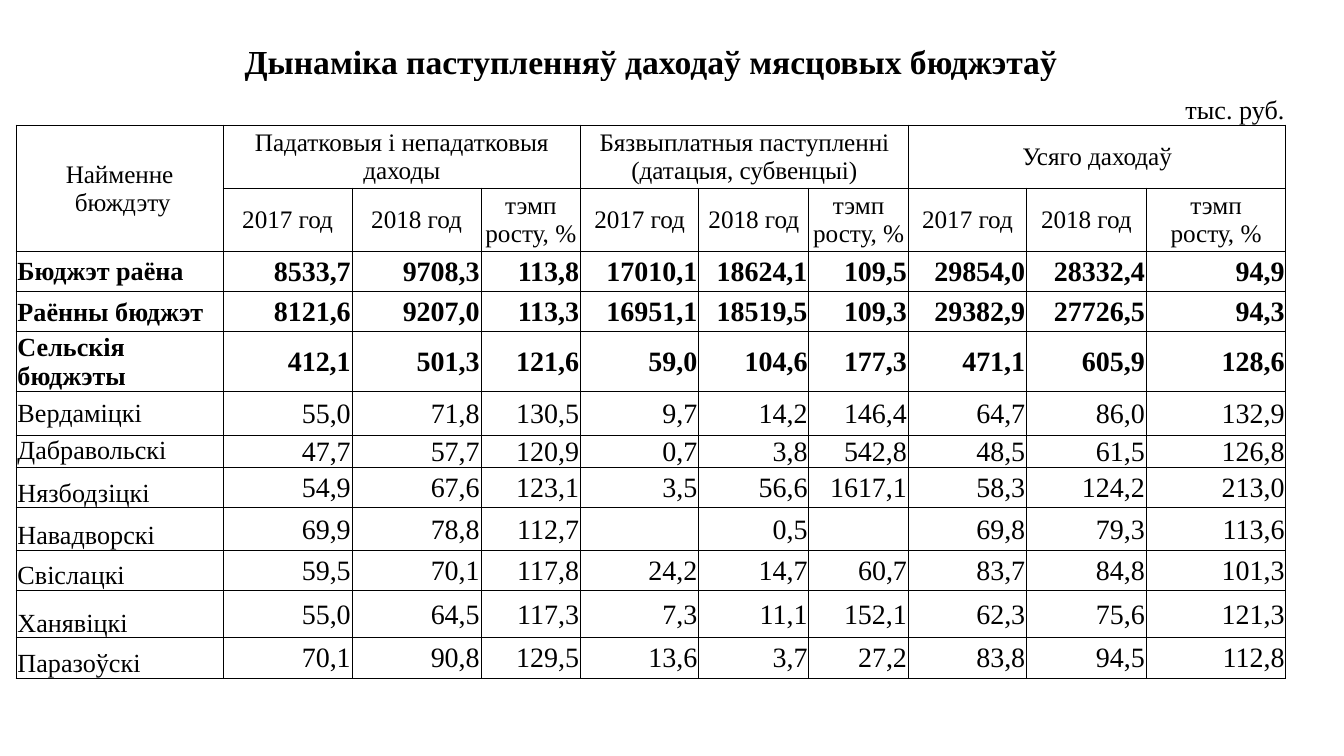
from lxml import etree
from pptx import Presentation
from pptx.dml.color import RGBColor
from pptx.enum.text import MSO_ANCHOR, PP_ALIGN
from pptx.oxml.ns import qn
from pptx.util import Inches, Pt

LEFT, CENTER, RIGHT = PP_ALIGN.LEFT, PP_ALIGN.CENTER, PP_ALIGN.RIGHT
TOP, MIDDLE, BOTTOM = MSO_ANCHOR.TOP, MSO_ANCHOR.MIDDLE, MSO_ANCHOR.BOTTOM
BLACK = "000000"


def write(cell, text, size, align, anchor=MIDDLE, bold=False):
    cell.vertical_anchor = anchor
    cell.text_frame.text = text
    for p in cell.text_frame.paragraphs:
        p.alignment = align
        for r in p.runs:
            r.font.name = "Times New Roman"
            r.font.size = Pt(size)
            r.font.bold = bold
            r.font.color.rgb = RGBColor.from_string(BLACK)


def border(cell, sides):
    tcPr = cell._tc.get_or_add_tcPr()
    for i, side in enumerate(sides):
        ln = etree.Element(qn("a:ln" + side), w=str(Pt(0.5)))
        fill = etree.SubElement(ln, qn("a:solidFill"))
        etree.SubElement(fill, qn("a:srgbClr"), val=BLACK)
        tcPr.insert(i, ln)


col_widths = [1.54, 0.96, 0.82, 0.14, 0.74, 0.88, 0.21, 0.61, 0.74, 0.88, 0.28, 0.61, 0.23, 0.81]
row_heights = [0.32, 0.32, 0.47, 0.47, 0.3, 0.3, 0.44, 0.33, 0.24, 0.3, 0.3, 0.3, 0.35, 0.3]
value_cols = [1, 2, 4, 5, 6, 8, 9, 10, 12]
wide_cols = [2, 6, 10, 12]
groups = [
    (1, 4, "Падатковыя і непадатковыя даходы"),
    (5, 8, "Бязвыплатныя паступленні (датацыя, субвенцыі)"),
    (9, 13, "Усяго даходаў"),
]
budgets = [
    ("Бюджэт раёна", "8533,7 9708,3 113,8 17010,1 18624,1 109,5 29854,0 28332,4 94,9"),
    ("Раённы бюджэт", "8121,6 9207,0 113,3 16951,1 18519,5 109,3 29382,9 27726,5 94,3"),
    ("Сельскія бюджэты", "412,1 501,3 121,6 59,0 104,6 177,3 471,1 605,9 128,6"),
    ("Вердаміцкі", "55,0 71,8 130,5 9,7 14,2 146,4 64,7 86,0 132,9"),
    ("Дабравольскі", "47,7 57,7 120,9 0,7 3,8 542,8 48,5 61,5 126,8"),
    ("Нязбодзіцкі", "54,9 67,6 123,1 3,5 56,6 1617,1 58,3 124,2 213,0"),
    ("Навадворскі", "69,9 78,8 112,7 - 0,5 - 69,8 79,3 113,6"),
    ("Свіслацкі", "59,5 70,1 117,8 24,2 14,7 60,7 83,7 84,8 101,3"),
    ("Ханявіцкі", "55,0 64,5 117,3 7,3 11,1 152,1 62,3 75,6 121,3"),
    ("Паразоўскі", "70,1 90,8 129,5 13,6 3,7 27,2 83,8 94,5 112,8"),
]

prs = Presentation()
prs.slide_width = Inches(10)
prs.slide_height = Inches(10) * 9 // 16
s = prs.slides.add_slide(prs.slide_layouts[6])
table = s.shapes.add_table(
    len(row_heights), len(col_widths), Inches(0.12), Inches(0.29),
    Inches(sum(col_widths)), Inches(sum(row_heights)),
).table
table.first_row = False
table.horz_banding = False
for col, width in zip(table.columns, col_widths):
    col.width = Inches(width)
for row, height in zip(table.rows, row_heights):
    row.height = Inches(height)

for i, row in enumerate(table.rows):
    for cell in row.cells:
        cell.margin_left = cell.margin_right = cell.margin_top = Inches(0.01)
        cell.margin_bottom = 0
        cell.fill.background()
        if i > 0:
            border(cell, "B" if i == 1 else "LRTB")

table.cell(0, 0).merge(table.cell(0, 13))
write(table.cell(0, 0), "Дынаміка паступленняў даходаў мясцовых бюджэтаў", 18, CENTER, BOTTOM, True)
for first, last in [(1, 2), (3, 6), (7, 8), (9, 10), (11, 12)]:
    table.cell(1, first).merge(table.cell(1, last))
write(table.cell(1, 13), "тыс. руб.", 14, RIGHT, BOTTOM)

table.cell(2, 0).merge(table.cell(3, 0))
write(table.cell(2, 0), "Найменне\n бюждэту", 13.5, CENTER)
for first, last, title in groups:
    table.cell(2, first).merge(table.cell(2, last))
    write(table.cell(2, first), title, 13.5, CENTER)

for i in range(3, len(row_heights)):
    for j in wide_cols:
        table.cell(i, j).merge(table.cell(i, j + 1))
for j, title in zip(value_cols, ["2017 год", "2018 год", "тэмп\nросту, %"] * 3):
    write(table.cell(3, j), title, 13.5, CENTER)

for i, (name, values) in enumerate(budgets):
    bold = i < 3
    name_anchor = MIDDLE if i < 4 else TOP if i == 4 else BOTTOM
    value_anchor = TOP if i == 4 else MIDDLE
    write(table.cell(i + 4, 0), name, 14, LEFT, name_anchor, bold)
    for j, value in zip(value_cols, values.split()):
        if value != "-":
            write(table.cell(i + 4, j), value, 15, RIGHT, value_anchor, bold)

prs.save("out.pptx")
